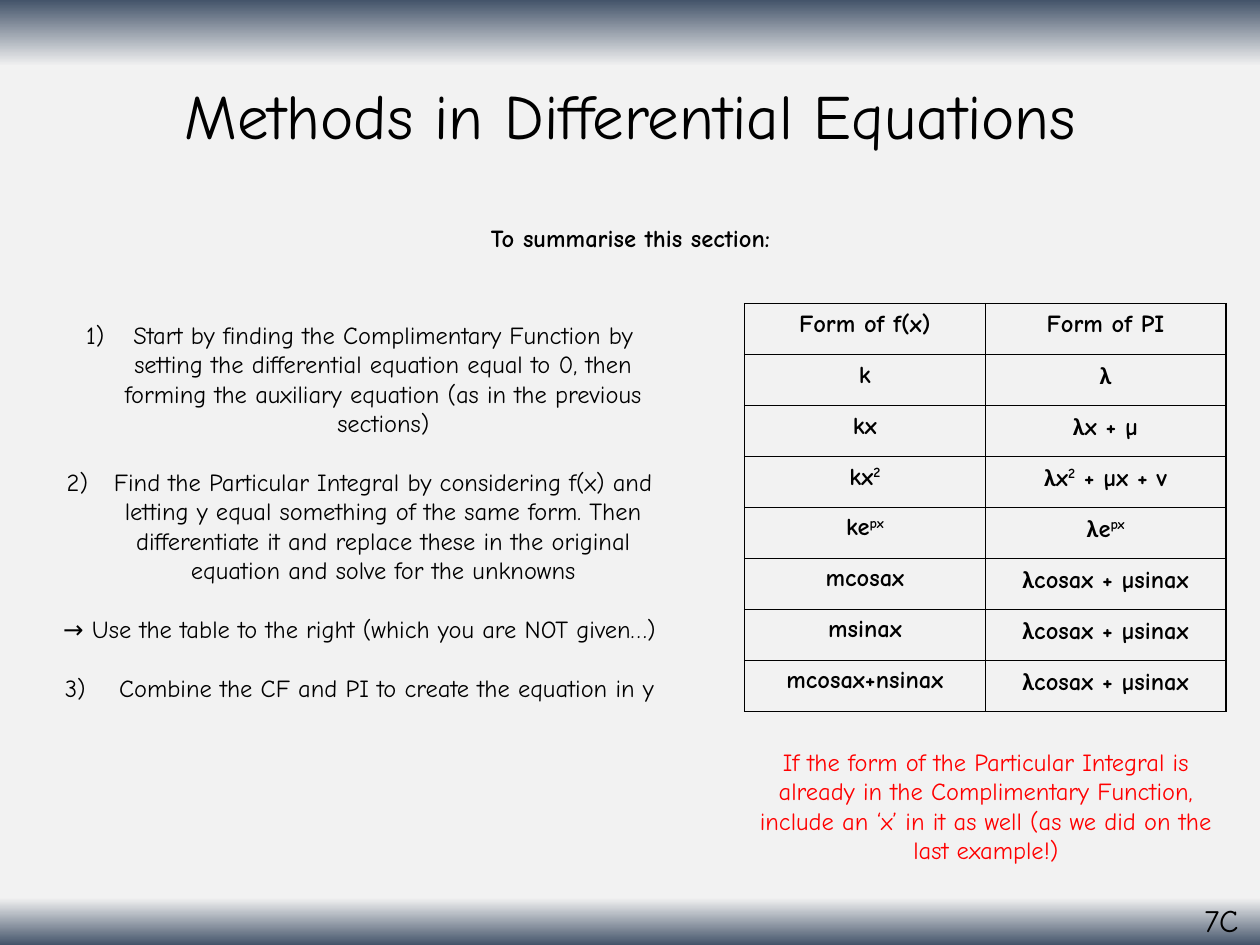
from itertools import groupby

from lxml import etree
from pptx import Presentation
from pptx import util as u
from pptx.dml.color import RGBColor
from pptx.enum import text
from pptx.oxml import parse_xml
from pptx.oxml.ns import nsdecls, qn

COLUMNS, ROWS = 100, 75
COLORS = {"ink": "000000", "warning": "FF0000", "edge": "44546A", "paper": "F2F2F2"}
FONT, GREEK_FONT = "Comic Neue", "Calibri"
BODY_SIZE = 14
STEP_GAP = 16.8

STEPS = [  # text, number, hanging indent in columns
    ("Start by finding the Complimentary Function by setting the differential equation "
     "equal to 0, then forming the auxiliary equation (as in the previous sections)", 1, 3.75),
    ("Find the Particular Integral by considering f(x) and letting y equal something of the "
     "same form. Then differentiate it and replace these in the original equation and solve "
     "for the unknowns", 2, 3.75),
    ("→ Use the table to the right (which you are NOT given…)", None, 0),
    ("Combine the CF and PI to create the equation in y", 3, 4.3),
]
WAVE_INTEGRAL = "λcosax + µsinax"
INTEGRAL_FORMS = [  # carets enclose superscripts
    ("Form of f(x)", "Form of PI"),
    ("k", "λ"),
    ("kx", "λx + µ"),
    ("kx^2^", "λx^2^ + µx + v"),
    ("ke^px^", "λe^px^"),
    ("mcosax", WAVE_INTEGRAL),
    ("msinax", WAVE_INTEGRAL),
    ("mcosax+nsinax", WAVE_INTEGRAL),
]


class SlideBuilder:
    def __init__(self, presentation):
        self.slide = presentation.slides.add_slide(presentation.slide_layouts[6])
        self.column = presentation.slide_width / COLUMNS
        self.row = presentation.slide_height / ROWS

    def place(self, left, top, width, height):
        """Turn columns and rows into slide lengths."""
        return (round(left * self.column), round(top * self.row),
                round(width * self.column), round(height * self.row))

    def background(self, stops):
        fill = self.slide.background.fill
        fill.gradient()
        fill.gradient_angle = 270
        properties = self.slide.background._cSld.bg.bgPr
        stop_list = properties.find(qn("a:gradFill")).find(qn("a:gsLst"))
        for stop in list(stop_list):
            stop_list.remove(stop)
        for percent, color in stops:
            stop = etree.SubElement(stop_list, qn("a:gs"), pos=str(percent * 1000))
            etree.SubElement(stop, qn("a:srgbClr"), val=COLORS[color])

    def style(self, paragraph, size=BODY_SIZE, color="ink", bold=False, centred=True):
        paragraph.font.name = FONT
        paragraph.font.size = u.Pt(size)
        paragraph.font.bold = bold
        paragraph.font.color.rgb = RGBColor.from_string(COLORS[color])
        paragraph.alignment = text.PP_ALIGN.CENTER if centred else text.PP_ALIGN.LEFT

    def frame(self, place, wrap=True):
        text_frame = self.slide.shapes.add_textbox(*self.place(*place)).text_frame
        text_frame.word_wrap = wrap
        return text_frame

    def label(self, words, place, wrap=True, middle=False, spacing=None, **style):
        text_frame = self.frame(place, wrap)
        if middle:
            text_frame.vertical_anchor = text.MSO_ANCHOR.MIDDLE
        paragraph = text_frame.paragraphs[0]
        paragraph.text = words
        paragraph.line_spacing = spacing
        self.style(paragraph, **style)

    def steps(self, steps, place):
        text_frame = self.frame(place)
        for index, (words, number, indent) in enumerate(steps):
            paragraph = text_frame.add_paragraph() if index else text_frame.paragraphs[0]
            paragraph.text = words
            self.style(paragraph)
            if index:
                paragraph.space_before = u.Pt(STEP_GAP)
            if number:
                self.number(paragraph, number, round(indent * self.column))

    def number(self, paragraph, number, indent):
        properties = paragraph._p.get_or_add_pPr()
        properties.set("marL", str(indent))
        properties.set("indent", str(-indent))
        bullet = parse_xml(f'<a:buAutoNum {nsdecls("a")} type="arabicParenR" startAt="{number}"/>')
        properties.find(qn("a:defRPr")).addprevious(bullet)

    def formula(self, paragraph, words):
        """Write superscripts between carets, and lambdas in the Greek font."""
        for index, part in enumerate(words.split("^")):
            for is_greek, letters in groupby(part, lambda letter: letter == "λ"):
                run = paragraph.add_run()
                run.text = "".join(letters)
                if is_greek:
                    run.font.name = GREEK_FONT
                if index % 2:
                    run._r.get_or_add_rPr().set("baseline", "30000")

    def border(self, cell):
        properties = cell._tc.get_or_add_tcPr()
        for side in "LRTB":
            properties.append(parse_xml(
                f'<a:ln{side} {nsdecls("a")} w="{u.Pt(1)}"><a:solidFill>'
                f'<a:srgbClr val="{COLORS["ink"]}"/></a:solidFill></a:ln{side}>'))

    def table(self, rows, place):
        table = self.slide.shapes.add_table(len(rows), len(rows[0]), *self.place(*place)).table
        table.first_row = table.horz_banding = False
        for row_index, row in enumerate(rows):
            for column_index, words in enumerate(row):
                cell = table.cell(row_index, column_index)
                paragraph = cell.text_frame.paragraphs[0]
                self.style(paragraph, bold=True)
                self.formula(paragraph, words)
                self.border(cell)
                cell.fill.background()


def main():
    presentation = Presentation()
    presentation.slide_width, presentation.slide_height = u.Inches(10), u.Inches(7.5)
    builder = SlideBuilder(presentation)
    builder.background([(0, "edge"), (7, "paper"), (95, "paper"), (100, "edge")])
    builder.label("To summarise this section:", (2.8, 17.5, 94.5, 54.3), spacing=0.9, bold=True)
    builder.steps(STEPS, (2.8, 24.9, 51.5, 34))
    builder.table(INTEGRAL_FORMS, (59.1, 24.1, 38.2, 32.4))
    builder.label("If the form of the Particular Integral is already in the Complimentary Function, "
                  "include an ‘x’ in it as well (as we did on the last example!)",
                  (59.1, 58.8, 38.3, 10.4), color="warning")
    builder.label("Methods in Differential Equations", (6.9, 3.5, 86.2, 11.9),
                  middle=True, spacing=0.9, size=36)
    builder.label("7C", (94.6, 71, 5.1, 4), wrap=False, size=18, centred=False)
    presentation.save("out.pptx")


if __name__ == "__main__":
    main()
